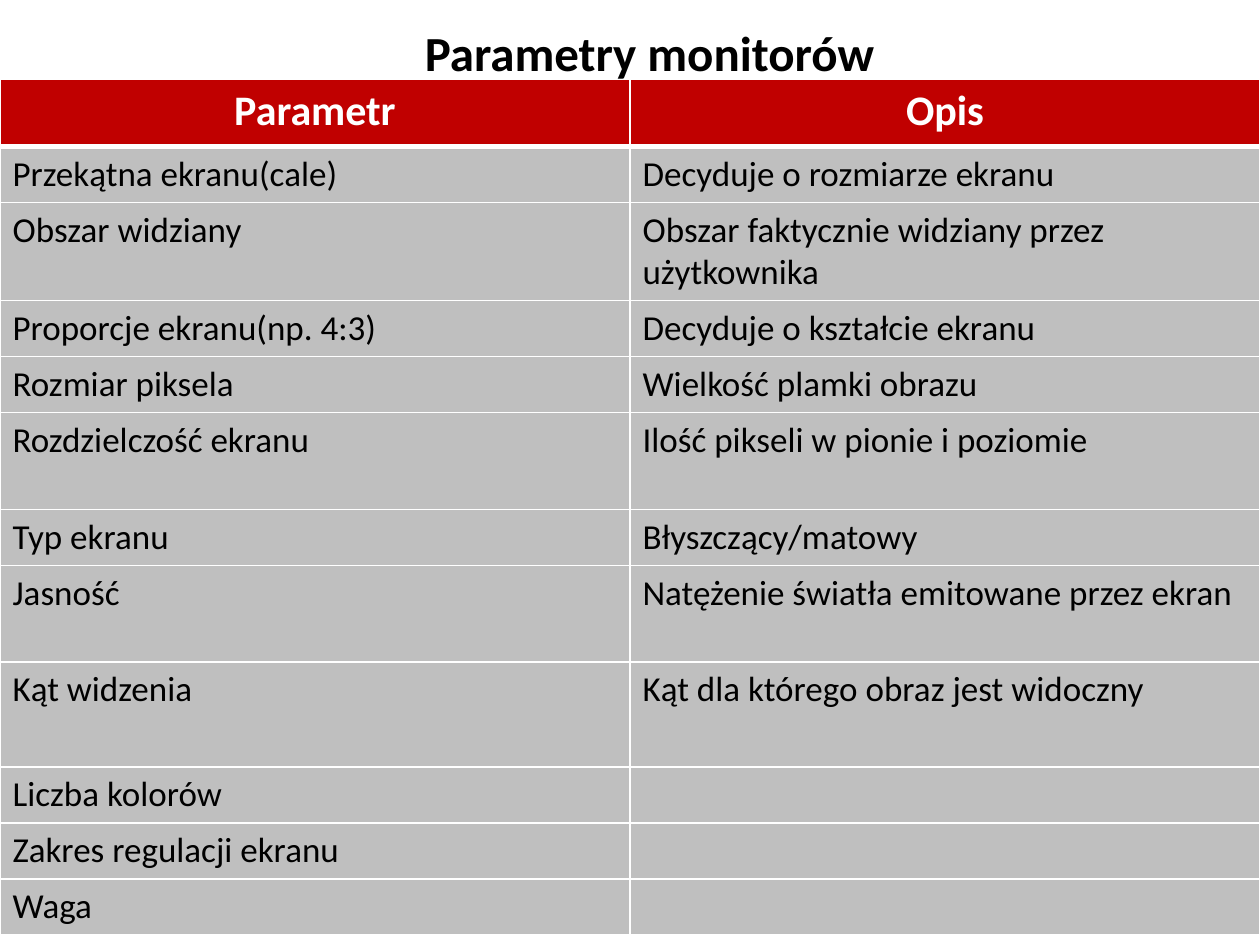
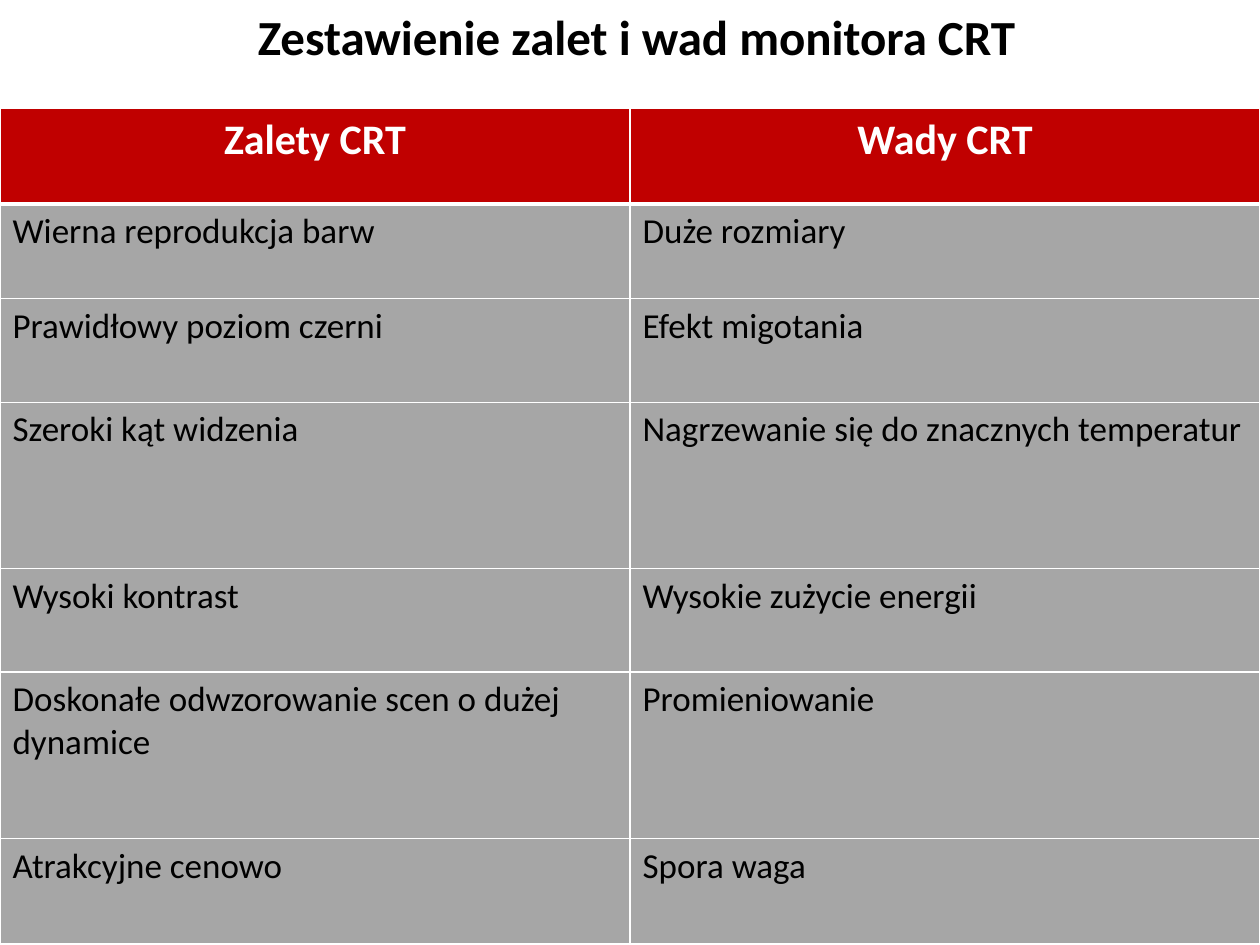
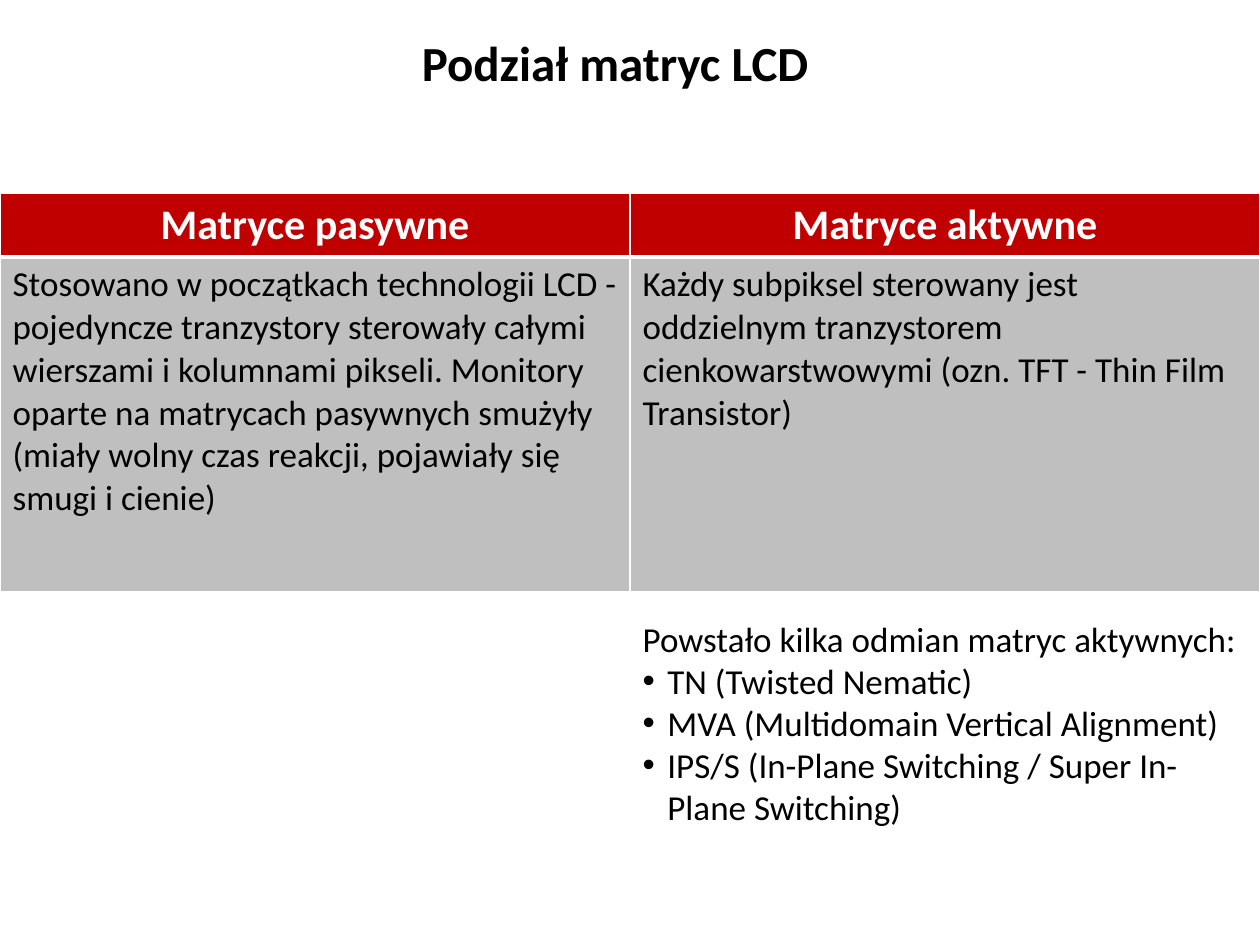
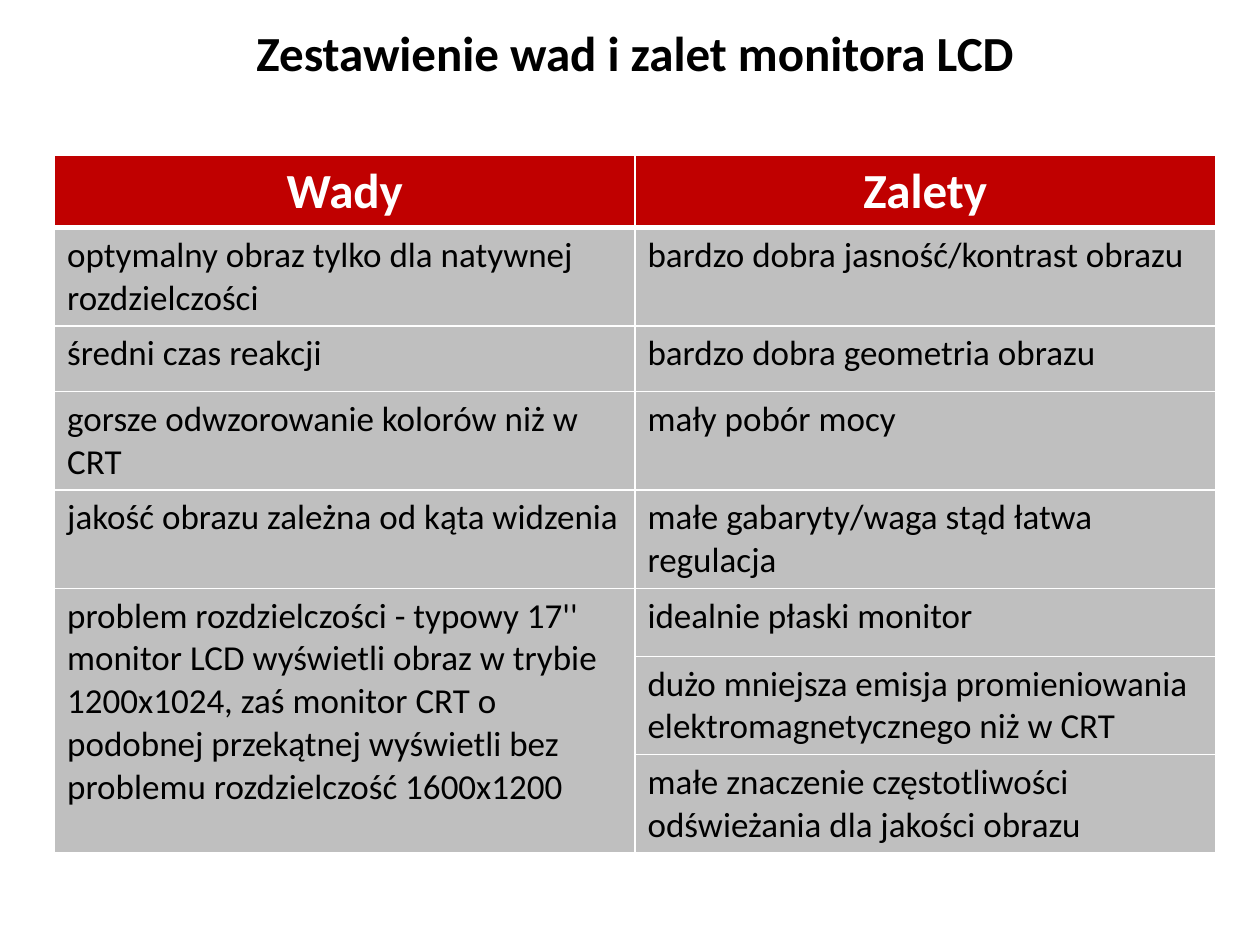
from lxml import etree
from pptx import Presentation
from pptx.dml.color import RGBColor
from pptx.enum.text import MSO_ANCHOR, MSO_AUTO_SIZE, PP_ALIGN
from pptx.oxml.ns import qn
from pptx.util import Cm, Pt

TOP = MSO_ANCHOR.TOP
NO_FIT = MSO_AUTO_SIZE.NONE
LEFT, CENTER = PP_ALIGN.LEFT, PP_ALIGN.CENTER
TITLE_ONLY, TITLE_BODY = 5, 1

COLORS = {"text": "000000", "light": "FFFFFF", "header": "C00000",
          "gray": "BFBFBF", "dark_gray": "A6A6A6"}
FONT = "Calibri"
TITLE = {"size": Pt(28), "bold": True}
HEADER = {"size": Pt(24), "bold": True}
BODY = {"size": Pt(20), "bold": False}
BULLET_INDENT = Cm(0.5)
THIN, THICK = Pt(1), Pt(3)

SLIDES = [
    {
        "title": "Parametry monitorów",
        "title_at": (8.31, 0.33, 10, 1.45),
        "title_align": LEFT,
        "table_at": (0, 1.6, 25.4),
        "heights": [1.35, 1.13, 1.95, 1.13, 1.13, 1.95, 1.13, 1.95, 2.11, 1.13, 1.13, 1.13],
        "rows": [
            ("Parametr", "Opis"),
            ("Przekątna ekranu(cale)", "Decyduje o rozmiarze ekranu"),
            ("Obszar widziany", "Obszar faktycznie widziany przez użytkownika"),
            ("Proporcje ekranu(np. 4:3)", "Decyduje o kształcie ekranu"),
            ("Rozmiar piksela", "Wielkość plamki obrazu"),
            ("Rozdzielczość ekranu", "Ilość pikseli w pionie i poziomie"),
            ("Typ ekranu", "Błyszczący/matowy"),
            ("Jasność", "Natężenie światła emitowane przez ekran"),
            ("Kąt widzenia", "Kąt dla którego obraz jest widoczny"),
            ("Liczba kolorów", ""),
            ("Zakres regulacji ekranu", ""),
            ("Waga", ""),
        ],
    },
    {
        "title": "Zestawienie zalet i wad monitora CRT",
        "title_at": (3.23, 0, 19.2, 1.45),
        "table_at": (0, 2.18, 25.4),
        "fill": "dark_gray",
        "heights": [1.93, 1.91, 2.09, 3.35, 2.09, 3.35, 2.13],
        "rows": [
            ("Zalety CRT", "Wady CRT"),
            ("Wierna reprodukcja barw", "Duże rozmiary"),
            ("Prawidłowy poziom czerni", "Efekt migotania"),
            ("Szeroki kąt widzenia", "Nagrzewanie się do znacznych temperatur"),
            ("Wysoki kontrast", "Wysokie zużycie energii"),
            ("Doskonałe odwzorowanie scen o dużej dynamice", "Promieniowanie"),
            ("Atrakcyjne cenowo", "Spora waga"),
        ],
    },
    {
        "title": "Podział matryc LCD",
        "title_at": (6.7, 0.53, 11.4, 1.45),
        "table_at": (0, 3.89, 25.4),
        "heights": [1.27, 6.76],
        "rows": [
            ("Matryce pasywne", "Matryce aktywne"),
            ("Stosowano w początkach technologii LCD - pojedyncze tranzystory "
             "sterowały całymi wierszami i kolumnami pikseli. Monitory oparte na "
             "matrycach pasywnych smużyły (miały wolny czas reakcji, pojawiały się "
             "smugi i cienie)",
             "Każdy subpiksel sterowany jest oddzielnym tranzystorem "
             "cienkowarstwowymi (ozn. TFT - Thin Film Transistor)"),
        ],
        "list_at": (12.7, 12.32, 12.7, 4.52),
        "list_intro": "Powstało kilka odmian matryc aktywnych:",
        "list_items": [
            "TN (Twisted Nematic)",
            "MVA (Multidomain Vertical Alignment)",
            "IPS/S (In-Plane Switching / Super In-Plane Switching)",
        ],
    },
    {
        "title": "Zestawienie wad i zalet monitora LCD",
        "title_at": (3.2, 0.33, 19.2, 1.45),
        "table_at": (1.1, 3.13, 23.4),
        "header": TITLE,
        "heights": [1.45, 1.95, 1.32, 1.95, 1.95, 1.37, 1.95, 1.95],
        "rows": [
            ("Wady", "Zalety"),
            ("optymalny obraz tylko dla natywnej rozdzielczości",
             "bardzo dobra jasność/kontrast obrazu"),
            ("średni czas reakcji", "bardzo dobra geometria obrazu"),
            ("gorsze odwzorowanie kolorów niż w CRT", "mały pobór mocy"),
            ("jakość obrazu zależna od kąta widzenia",
             "małe gabaryty/waga stąd łatwa regulacja"),
            ("problem rozdzielczości - typowy 17'' monitor LCD wyświetli obraz "
             "w trybie 1200x1024, zaś monitor CRT o podobnej przekątnej wyświetli "
             "bez problemu rozdzielczość 1600x1200",
             "idealnie płaski monitor"),
            (None, "dużo mniejsza emisja promieniowania elektromagnetycznego niż w CRT"),
            (None, "małe znaczenie częstotliwości odświeżania dla jakości obrazu"),
        ],
        "merge": ((5, 0), (7, 0)),
    },
]


def rgb(name):
    return RGBColor.from_string(COLORS[name])


def write(p, text, style, color="text", align=LEFT):
    p.alignment = align
    if not text:
        return
    r = p.add_run()
    r.text = text
    for key, value in {"name": FONT, **style}.items():
        setattr(r.font, key, value)
    r.font.color.rgb = rgb(color)


def place(sp, at):
    sp.left, sp.top, sp.width, sp.height = map(Cm, at)
    tf = sp.text_frame
    for key, value in {"word_wrap": True, "auto_size": NO_FIT,
                       "vertical_anchor": TOP}.items():
        setattr(tf, key, value)
    return tf


def set_bullet(p, bulleted):
    pPr = p._p.get_or_add_pPr()
    indent = BULLET_INDENT if bulleted else 0
    pPr.set("marL", str(indent))
    pPr.set("indent", str(-indent))
    if bulleted:
        etree.SubElement(pPr, qn("a:buChar")).set("char", "•")
    else:
        etree.SubElement(pPr, qn("a:buNone"))


def set_borders(cell, row):
    tcPr = cell._tc.get_or_add_tcPr()
    widths = {"L": THIN, "R": THIN, "T": THICK if row == 1 else THIN,
              "B": THICK if row == 0 else THIN}
    for i, (side, width) in enumerate(widths.items()):
        ln = etree.Element(qn(f"a:ln{side}"), w=str(width))
        fill = etree.SubElement(ln, qn("a:solidFill"))
        etree.SubElement(fill, qn("a:srgbClr"), val=COLORS["light"])
        tcPr.insert(i, ln)


def add_table(s, spec_):
    left, top, width = spec_["table_at"]
    rows, heights = spec_["rows"], spec_["heights"]
    cols = len(rows[0])
    table = s.shapes.add_table(len(rows), cols, Cm(left), Cm(top),
                               Cm(width), Cm(sum(heights))).table
    table.horz_banding = False
    for col in table.columns:
        col.width = Cm(width / cols)
    for i, (values, height) in enumerate(zip(rows, heights)):
        table.rows[i].height = Cm(height)
        for j, text in enumerate(values):
            cell = table.cell(i, j)
            cell.fill.solid()
            p = cell.text_frame.paragraphs[0]
            if i == 0:
                cell.fill.fore_color.rgb = rgb("header")
                write(p, text, spec_.get("header", HEADER), "light", CENTER)
            else:
                cell.fill.fore_color.rgb = rgb(spec_.get("fill", "gray"))
                write(p, text, BODY)
            set_borders(cell, i)
    if "merge" in spec_:
        first, last = spec_["merge"]
        table.cell(*first).merge(table.cell(*last))


def add_list(s, at, intro, items):
    tf = place(s.placeholders[1], at)
    for i, text in enumerate([intro] + items):
        p = tf.paragraphs[0] if i == 0 else tf.add_paragraph()
        p.space_before = Pt(0)
        set_bullet(p, i > 0)
        write(p, text, BODY)


def main():
    prs = Presentation()
    prs.slide_width, prs.slide_height = Cm(25.4), Cm(19.05)
    for content in SLIDES:
        has_list = "list_items" in content
        layout = TITLE_BODY if has_list else TITLE_ONLY
        s = prs.slides.add_slide(prs.slide_layouts[layout])
        tf = place(s.shapes.title, content["title_at"])
        write(tf.paragraphs[0], content["title"], TITLE,
              align=content.get("title_align", CENTER))
        add_table(s, content)
        if has_list:
            add_list(s, content["list_at"], content["list_intro"], content["list_items"])
    prs.save("out.pptx")


if __name__ == "__main__":
    main()
